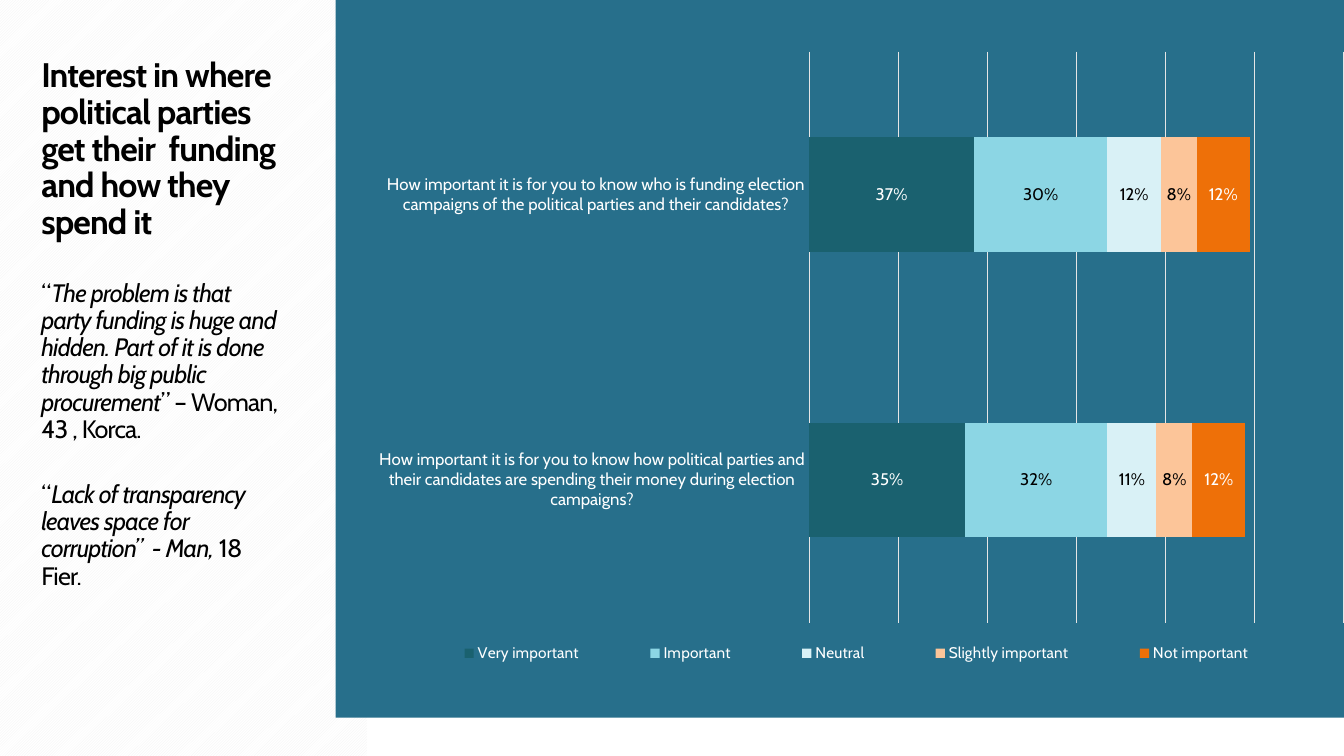
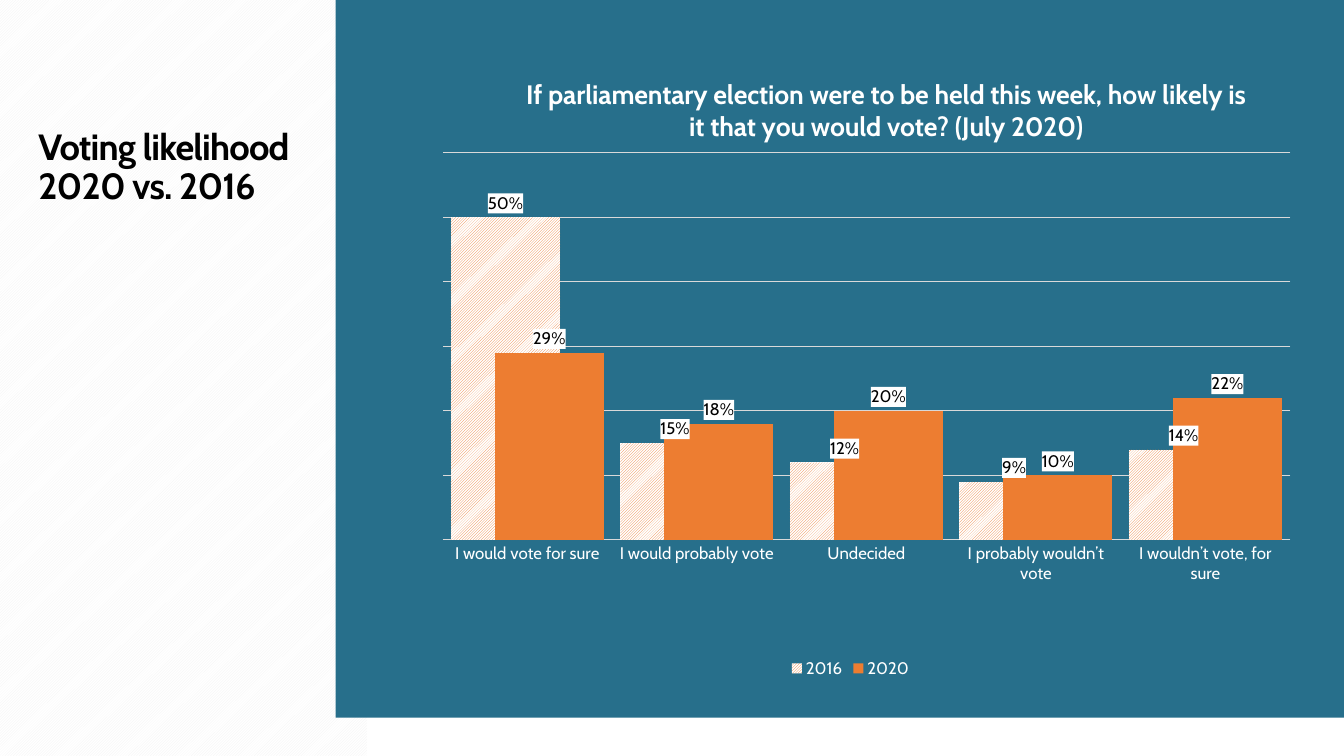
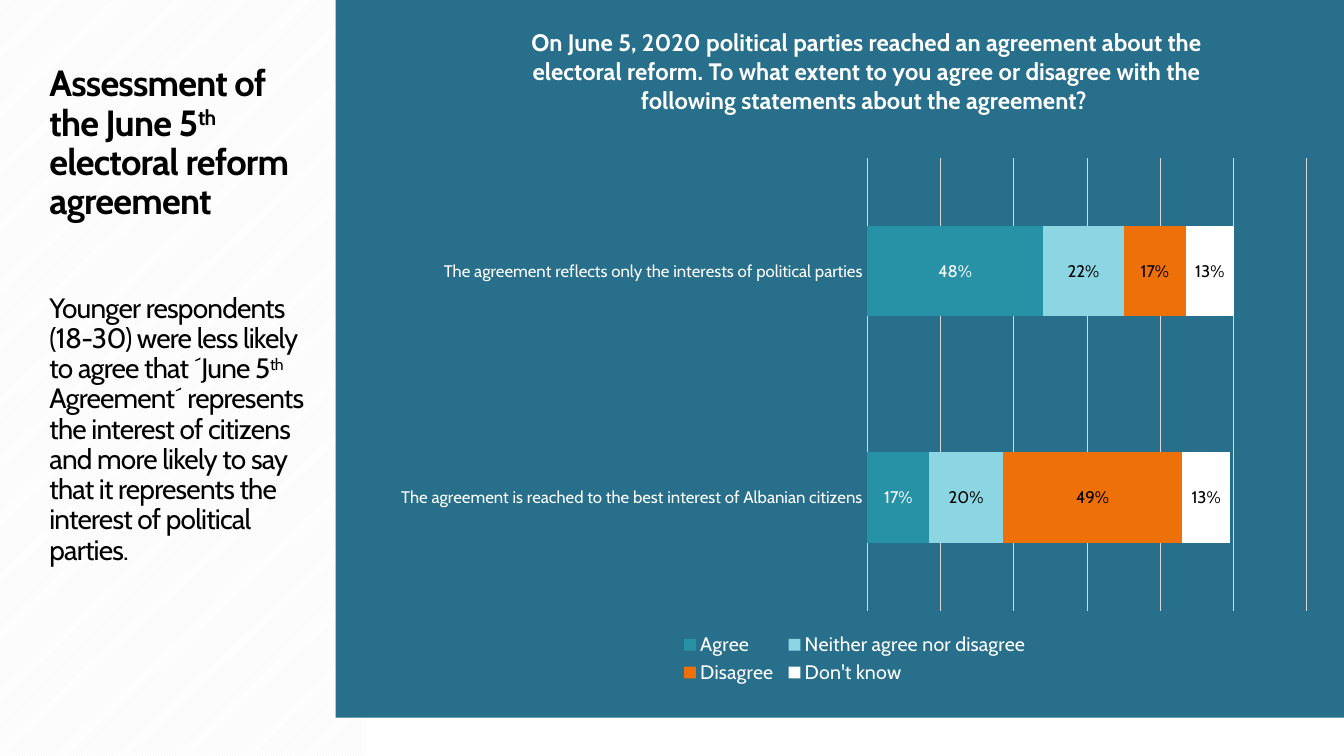
import pptx
import pptx.chart.data
import pptx.dml.color
import pptx.enum.chart
import pptx.enum.dml
import pptx.enum.shapes
import pptx.enum.text
import pptx.oxml
import pptx.oxml.ns
import pptx.util

RGB = pptx.dml.color.RGBColor
XL = pptx.enum.chart.XL_CHART_TYPE
POS = pptx.enum.chart.XL_LABEL_POSITION
PATTERN = pptx.enum.dml.MSO_PATTERN_TYPE
ALIGN = pptx.enum.text.PP_ALIGN
Inches, Pt = pptx.util.Inches, pptx.util.Pt
qn = pptx.oxml.ns.qn

# Shared look
FONT = "Cabin"
BLACK, WHITE = RGB(0, 0, 0), RGB(255, 255, 255)
PANEL, HATCH = RGB(0x27, 0x6F, 0x8B), RGB(0xF2, 0xF2, 0xF2)
DARK_TEAL, TEAL = RGB(0x1A, 0x61, 0x6F), RGB(0x27, 0x91, 0xA6)
SKY, ICE = RGB(0x8C, 0xD6, 0xE4), RGB(0xD9, 0xF1, 0xF6)
PEACH, ORANGE = RGB(0xFC, 0xC5, 0x99), RGB(0xEE, 0x70, 0x08)
BAR_ORANGE = RGB(0xED, 0x7D, 0x31)
PALE_GRID, GREY_GRID = RGB(0xE5, 0xE5, 0xE5), RGB(0xD9, 0xD9, 0xD9)
SLIDE_W, SLIDE_H = 13.33, 7.5
SIDE_W, PANEL_X, PANEL_H = 3.64, 3.33, 7.12

# Content: paragraphs are (size, bold, space before, runs); runs are (text, style)
# Series are (name, values, fill colour, label colour)
SLIDES = [
    dict(
        title_box=(0.31, 0.53, 2.54, 5.6),
        title=[
            (24.3, True, 0, [("Interest in where political parties get their  funding "
                              "and how they spend it", "")]),
            (18, False, 27.5, [
                ("“", ""),
                ("The problem is that party funding is huge and hidden. Part of it is "
                 "done through big public procurement", "italic"),
                ("” – Woman, 43 , Korca.", "")]),
            (18, False, 27, [
                ("“", ""),
                ("Lack of transparency leaves space for corruption”  - Man, ", "italic"),
                ("18 Fier.", "")]),
        ],
        chart=dict(
            box=(3.76, 0.34, 9.57, 6.43), kind=XL.BAR_STACKED, grid=PALE_GRID,
            plot=(0.446, 0.027, 0.554, 0.881), legend=(0.02, 0.93, 0.95, 0.05),
            legend_size=11, gap=150, overlap=100, top=120, step=20, format='0"%"',
            cats=["How important it is for you to know how political parties and their "
                  "candidates are spending their money during election campaigns?",
                  "How important it is for you to know who is funding election campaigns "
                  "of the political parties and their candidates?"],
            series=[("Very important", (35, 37), DARK_TEAL, WHITE),
                    ("Important", (32, 30), SKY, BLACK),
                    ("Neutral", (11, 12), ICE, BLACK),
                    ("Slightly important", (8, 8), PEACH, BLACK),
                    ("Not important", (12, 12), ORANGE, WHITE)]),
    ),
    dict(
        title_box=(0.28, 1.23, 3.17, 5.03),
        title=[(26, True, 0, [("Voting likelihood", "")]),
               (26, True, 0, [("2020 vs. 2016", "")])],
        chart=dict(
            box=(3.9, 0.71, 9.07, 6.06), kind=XL.COLUMN_CLUSTERED, grid=GREY_GRID,
            plot=(0.054, 0.133, 0.927, 0.634), gap=15, overlap=60, top=0.6, step=0.1,
            title="If parliamentary election were to be held this week, how likely is "
                  "it that you would vote? (July 2020)",
            title_at=(0.14, 0), label_fill="FFFFFF", hatched="2016",
            cats=["I would vote for sure", "I would probably vote", "Undecided",
                  "I probably wouldn’t vote", "I wouldn’t vote, for sure"],
            series=[("2016", (0.50, 0.15, 0.12, 0.09, 0.14), BAR_ORANGE, BLACK),
                    ("2020", (0.29, 0.18, 0.20, 0.10, 0.22), BAR_ORANGE, BLACK)]),
    ),
    dict(
        title_box=(0.39, 0.6, 2.81, 5.58),
        title=[
            (26, True, 0, [("Assessment of the June 5", ""), ("th", "super"),
                           (" electoral reform agreement", "")]),
            (20, False, 51, [
                ("Younger respondents (18-30) were less likely to agree that ´June 5", ""),
                ("th", "super"),
                (" Agreement´ represents the interest of citizens and more likely to say "
                 "that it represents the interest of political parties.", "")]),
        ],
        chart=dict(
            box=(3.8, 1.46, 9.36, 5.37), kind=XL.BAR_STACKED, grid=GREY_GRID,
            plot=(0.513, 0.02, 0.466, 0.837), legend=(0.31, 0.89, 0.38, 0.11),
            legend_size=14, gap=150, overlap=100, top=1.2, step=0.2,
            cats=["The agreement is reached to the best interest of Albanian citizens",
                  "The agreement reflects only the interests of political parties"],
            series=[("Agree", (0.17, 0.48), TEAL, WHITE),
                    ("Neither agree nor disagree", (0.20, 0.22), SKY, BLACK),
                    ("Disagree", (0.49, 0.17), ORANGE, BLACK),
                    ("Don't know", (0.13, 0.13), WHITE, BLACK)]),
        question=((4.71, 0.23, 7.77, 0.96),
                  "On June 5, 2020 political parties reached an agreement about the "
                  "electoral reform. To what extent to you agree or disagree with the "
                  "following statements about the agreement? "),
    ),
]


def inches(box):
    return [Inches(v) for v in box]


def style_font(font, size, color, bold=False, italic=False):
    font.name, font.size, font.bold, font.italic = FONT, Pt(size), bold, italic
    font.color.rgb = color


def write(p, text, size=12, color=BLACK, bold=False, style="", spacing=None):
    r = p.add_run()
    r.text = text
    style_font(r.font, size, color, bold, style == "italic")
    rPr = r.font._element
    if spacing:
        rPr.set("spc", str(spacing))
    if style == "super":
        rPr.set("baseline", "30000")


def add_backdrop(s, layout):
    """Draw the hatched side and the blue panel, then hand them to the layout."""
    side = s.shapes.add_shape(pptx.enum.shapes.MSO_SHAPE.RECTANGLE,
                              *inches((0, 0, SIDE_W, SLIDE_H)))
    side.fill.patterned()
    side.fill.pattern = PATTERN.DARK_UPWARD_DIAGONAL
    side.fill.fore_color.rgb, side.fill.back_color.rgb = HATCH, WHITE
    panel = s.shapes.add_shape(pptx.enum.shapes.MSO_SHAPE.RECTANGLE,
                               *inches((PANEL_X, 0, SLIDE_W - PANEL_X, PANEL_H)))
    panel.fill.solid()
    panel.fill.fore_color.rgb = PANEL
    for i, shape in enumerate((side, panel)):
        shape.shadow.inherit = False
        shape.line.fill.background()
        layout.shapes.element.insert(2 + i, shape._element)


def add_title(s, box, paragraphs):
    title = s.shapes.title
    title.left, title.top, title.width, title.height = inches(box)
    tf = title.text_frame
    tf.word_wrap = True
    tf.auto_size = pptx.enum.text.MSO_AUTO_SIZE.NONE
    tf.vertical_anchor = pptx.enum.text.MSO_ANCHOR.TOP
    for i, (size, bold, before, runs) in enumerate(paragraphs):
        p = tf.add_paragraph() if i else tf.paragraphs[0]
        p.alignment, p.line_spacing, p.space_before = ALIGN.LEFT, 0.9, Pt(before)
        for text, style in runs:
            write(p, text, size=size, bold=bold, style=style, spacing=-60)


def set_layout(parent, index, shares, inner=False):
    """Place a chart part by shares (x, y, w, h) of the chart's size."""
    for old in parent.findall(qn("c:layout")):
        parent.remove(old)
    target = '<c:layoutTarget val="inner"/>' if inner else ""
    modes = '<c:xMode val="edge"/><c:yMode val="edge"/>'
    values = "".join(f'<c:{k} val="{v}"/>' for k, v in zip("xywh", shares))
    parent.insert(index, pptx.oxml.parse_xml(
        f'<c:layout {pptx.oxml.ns.nsdecls("c")}><c:manualLayout>'
        f'{target}{modes}{values}</c:manualLayout></c:layout>'))


def style_series(series, fill_color, label_color, chart_spec, stacked):
    fill = series.format.fill
    if series.name == chart_spec.get("hatched"):
        fill.patterned()
        fill.pattern = PATTERN.LIGHT_UPWARD_DIAGONAL
        fill.back_color.rgb = WHITE
    else:
        fill.solid()
    fill.fore_color.rgb = fill_color
    labels = series.data_labels
    labels.show_value = True
    labels.number_format = chart_spec.get("format", "0%")
    labels.number_format_is_linked = False
    labels.position = POS.CENTER if stacked else POS.OUTSIDE_END
    style_font(labels.font, 12, label_color)
    if "label_fill" in chart_spec:
        labels._element.find(qn("c:txPr")).addprevious(pptx.oxml.parse_xml(
            f'<c:spPr {pptx.oxml.ns.nsdecls("c", "a")}><a:solidFill>'
            f'<a:srgbClr val="{chart_spec["label_fill"]}"/></a:solidFill></c:spPr>'))


def add_chart(s, chart_spec):
    kind, grid = chart_spec["kind"], chart_spec["grid"]
    data = pptx.chart.data.CategoryChartData(number_format=chart_spec.get("format", "0%"))
    data.categories = chart_spec["cats"]
    for name, values, *_ in chart_spec["series"]:
        data.add_series(name, values)
    chart = s.shapes.add_chart(kind, *inches(chart_spec["box"]), data).chart
    style_font(chart.font, 12, WHITE)

    # Title
    chart.has_title = "title" in chart_spec
    if chart.has_title:
        p = chart.chart_title.text_frame.paragraphs[0]
        write(p, chart_spec["title"], size=19, color=WHITE, bold=True)
        set_layout(chart.chart_title._element, 1, chart_spec["title_at"])

    # Bars
    plot = chart.plots[0]
    plot.gap_width, plot.overlap = chart_spec["gap"], chart_spec["overlap"]
    plot.vary_by_categories = False
    set_layout(chart._chartSpace.chart.plotArea, 0, chart_spec["plot"], inner=True)
    for series, (_, _, fill_color, label_color) in zip(plot.series, chart_spec["series"]):
        style_series(series, fill_color, label_color, chart_spec, kind == XL.BAR_STACKED)

    # Axes
    cat, val = chart.category_axis, chart.value_axis
    cat.major_tick_mark = pptx.enum.chart.XL_TICK_MARK.NONE
    style_font(cat.tick_labels.font, 12, WHITE)
    val.minimum_scale, val.maximum_scale = 0, chart_spec["top"]
    val.major_unit = chart_spec["step"]
    val.has_major_gridlines, val.visible = True, False
    for line in (cat.format.line, val.major_gridlines.format.line):
        line.color.rgb, line.width = grid, Pt(0.75)

    # Legend
    chart.has_legend = True
    chart.legend.position = pptx.enum.chart.XL_LEGEND_POSITION.BOTTOM
    chart.legend.include_in_layout = False
    style_font(chart.legend.font, chart_spec.get("legend_size", 12), WHITE)
    if "legend" in chart_spec:
        set_layout(chart.legend._element, 1, chart_spec["legend"])


def add_question(s, box, text):
    tf = s.shapes.add_textbox(*inches(box)).text_frame
    tf.word_wrap = True
    tf.paragraphs[0].alignment = ALIGN.CENTER
    write(tf.paragraphs[0], text, size=17, color=WHITE, bold=True)


def main():
    prs = pptx.Presentation()
    prs.slide_width, prs.slide_height = inches((SLIDE_W, SLIDE_H))
    layout = prs.slide_layouts[5]
    for i, content in enumerate(SLIDES):
        s = prs.slides.add_slide(layout)
        if i == 0:
            add_backdrop(s, layout)
        add_title(s, content["title_box"], content["title"])
        add_chart(s, content["chart"])
        if "question" in content:
            add_question(s, *content["question"])
    prs.save("out.pptx")


if __name__ == "__main__":
    main()
